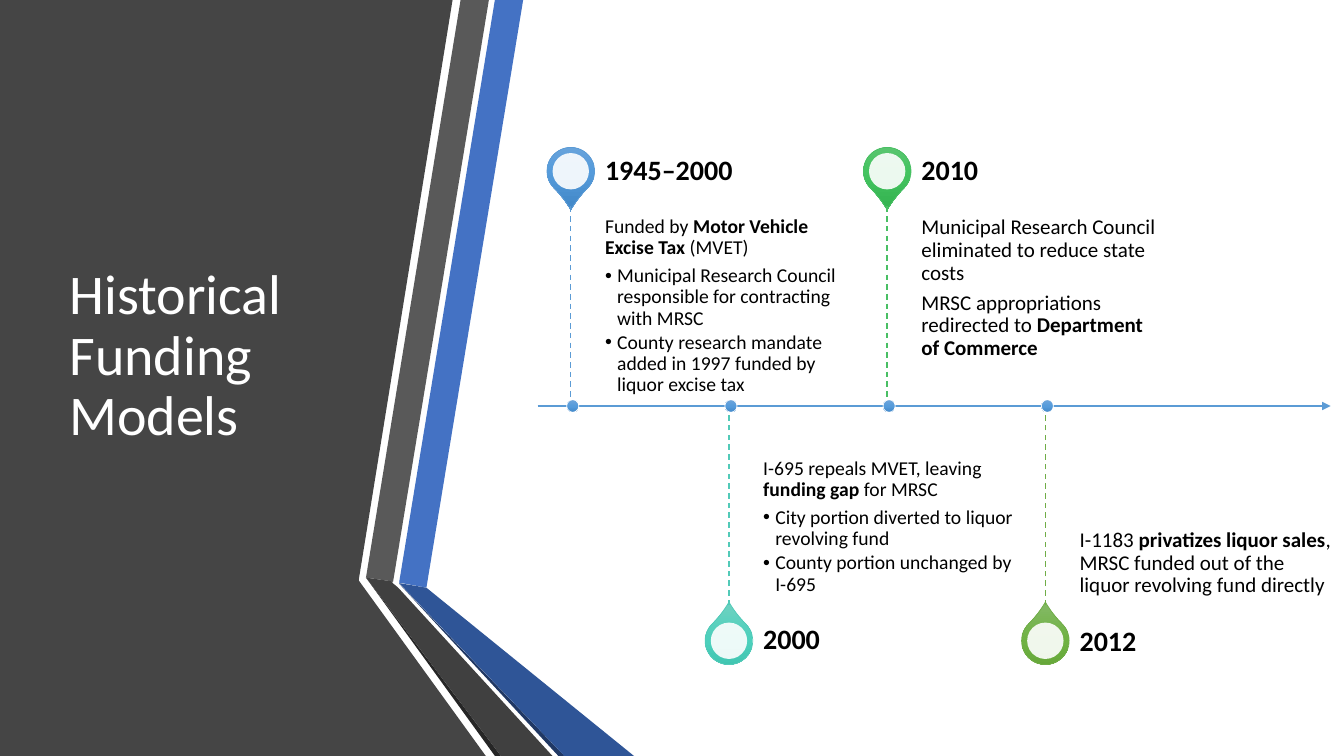
from lxml import etree
from pptx import Presentation
from pptx.dml.color import RGBColor
from pptx.enum.dml import MSO_LINE
from pptx.enum.shapes import MSO_CONNECTOR as Link, MSO_SHAPE as Preset
from pptx.enum.text import MSO_ANCHOR as Anchor
from pptx.oxml.ns import qn
from pptx.util import Pt

AXIS_COLOUR = "5B9BD5"
AXIS_GRADIENT = ("71A6DB", "559BDB", "448ACA")
BULLET = "• "

# Layered ribbon pieces, back to front: colour and outline
RIBBONS = [
    ("454545", [(0, 0), (323.3, 0), (256.3, 414), (256.3, 414.7), (347, 540), (0, 540)]),
    ("4472C4", [(285.1, 416.2), (304.6, 419.8), (373.7, 0), (353.5, 0)]),
    ("595959", [(349.2, 0), (329, 0), (261.4, 412.6), (280.8, 415.4)]),
    ("262626", [(261.4, 412.6), (353.5, 540), (357.8, 540)]),
    ("203864", [(285.1, 416.9), (398.9, 540), (403.2, 540)]),
    ("2F5597", [(285.1, 416.5), (403.2, 540), (452.9, 540), (304.6, 419.8)]),
    ("404040", [(394.6, 540), (284.4, 419.8), (280.1, 416.2), (280.8, 415.4),
                (261.4, 412.6), (357.8, 540)]),
]

# Double asterisks enclose bold words
EVENTS = [
    dict(year="1945–2000", colour=AXIS_COLOUR, gradient=AXIS_GRADIENT, size=14, nudge=0,
         story=["Funded by **Motor Vehicle Excise Tax** (MVET)",
                "• Municipal Research Council responsible for contracting with MRSC",
                "• County research mandate added in 1997 funded by liquor excise tax"]),
    dict(year="2000", colour="52CAB8", gradient=("6AD1C0", "4CD0BC", "3CC0AC"), size=14, nudge=0,
         story=["I-695 repeals MVET, leaving **funding gap **for MRSC",
                "• City portion diverted to liquor revolving fund",
                "• County portion unchanged by I-695"]),
    dict(year="2010", colour="49BF64", gradient=("64C677", "44C460", "36B552"), size=15, nudge=0,
         story=["Municipal Research Council eliminated to reduce state costs",
                "MRSC appropriations redirected to **Department of Commerce**"]),
    dict(year="2012", colour="70AD47", gradient=("81B861", "6FB242", "62A336"), size=15, nudge=1.4,
         story=["I-1183 **privatizes liquor sales**, MRSC funded out of the "
                "liquor revolving fund directly"]),
]


def rgb(colour):
    return RGBColor.from_string(colour)


def apply(target, values):
    for key, value in values.items():
        setattr(target, key, value)


def add_text(slide, box, paragraphs, size, colour, anchor, insets, bold=False):
    frame = slide.shapes.add_textbox(*map(Pt, box)).text_frame
    sides = ("margin_left", "margin_top", "margin_right", "margin_bottom")
    apply(frame, dict(zip(sides, map(Pt, insets)), word_wrap=True, vertical_anchor=anchor))
    for index, words in enumerate(paragraphs):
        paragraph = frame.paragraphs[0] if index == 0 else frame.add_paragraph()
        bulleted = words.startswith(BULLET)
        if bulleted:
            words = words.removeprefix(BULLET)
            props = paragraph._p.get_or_add_pPr()
            props.set("marL", str(Pt(8.64)))
            props.set("indent", str(-Pt(8.64)))
            etree.SubElement(props, qn("a:buFont")).set("typeface", "Arial")
            etree.SubElement(props, qn("a:buChar")).set("char", "•")
        apply(paragraph, dict(line_spacing=0.9,
                              space_after=Pt(size * (0.15 if bulleted else 0.35))))
        for part, piece in enumerate(words.split("**")):
            if piece:
                run = paragraph.add_run()
                run.text = piece
                apply(run.font, dict(name="Calibri", size=Pt(size), bold=bold or part % 2 == 1))
                run.font.color.rgb = rgb(colour)


def add_line(slide, start, end, colour, width):
    line = slide.shapes.add_connector(Link.STRAIGHT, *map(Pt, (*start, *end)))
    line.line.color.rgb = rgb(colour)
    line.line.width = Pt(width)
    etree.SubElement(line._element.spPr, qn("a:effectLst"))
    return line


def add_centred(slide, preset, x, y, width, height):
    shape = slide.shapes.add_shape(
        preset, Pt(x - width / 2), Pt(y - height / 2), Pt(width), Pt(height))
    shape.shadow.inherit = False
    return shape


def shade(shape, gradient, outline):
    shape.line.color.rgb = rgb(outline)
    shape.line.width = Pt(0.5)
    shape.fill.gradient()
    fill = shape._element.spPr.find(qn("a:gradFill"))
    fill.set("rotWithShape", "0")
    stops = fill.find(qn("a:gsLst"))
    for stop in list(stops):
        stops.remove(stop)
    for position, colour in zip((0, 50000, 100000), gradient):
        stop = etree.SubElement(stops, qn("a:gs"), pos=str(position))
        etree.SubElement(stop, qn("a:srgbClr"), val=colour)
    direction = fill.find(qn("a:lin"))
    direction.set("ang", "5400000")
    direction.set("scaled", "0")


def add_title_panel(slide, box):
    left, top, width, height = box
    for colour, outline in RIBBONS:
        points = [(Pt(left + x), Pt(top + y)) for x, y in outline]
        builder = slide.shapes.build_freeform(*points[0])
        builder.add_line_segments(points[1:], close=True)
        ribbon = builder.convert_to_shape()
        ribbon.shadow.inherit = False
        ribbon.fill.solid()
        ribbon.fill.fore_color.rgb = rgb(colour)
        ribbon.line.fill.background()
    add_text(slide, (left + 42.5, top + 54, 219, 402), ["Historical Funding Models"],
             40, "FFFFFF", Anchor.MIDDLE, (7.2, 3.6, 7.2, 3.6))


def add_event(slide, event, x, axis_y, above):
    reach, label_height = 142.5, 50.4
    side = -1 if above else 1
    tip_y = axis_y + side * reach
    pin_y = tip_y + side * label_height / 2
    text_left = x + 24.5

    # Pin with its pale centre
    pin = add_centred(slide, Preset.TEAR, x, pin_y, 34, 34)
    pin.adjustments[0] = 1.15
    pin.rotation = 135 if above else 315
    shade(pin, event["gradient"], event["colour"])
    centre = add_centred(slide, Preset.OVAL, x, pin_y, 26, 26)
    centre.fill.solid()
    centre.fill.fore_color.rgb = rgb("FFFFFF")
    centre.line.fill.background()
    tint = centre._element.spPr.find(qn("a:solidFill"))[0]
    etree.SubElement(tint, qn("a:alpha"), val="90000")

    # Story and year
    insets = (0, 7.2, 7.2, 11) if above else (0, 11, 0, 7.2)
    story_top = min(axis_y, tip_y) + event["nudge"]
    add_text(slide, (text_left, story_top, 180, reach), event["story"], event["size"],
             "000000", Anchor.TOP if above else Anchor.BOTTOM, insets)
    add_text(slide, (text_left, pin_y - label_height / 2 + event["nudge"], 180, label_height),
             [event["year"]], 20, "000000", Anchor.MIDDLE, (0, 0, 10, 0), bold=True)

    # Stem and its dot on the axis
    stem = add_line(slide, (x, tip_y), (x, axis_y), event["colour"], 1)
    stem.line.dash_style = MSO_LINE.DASH
    dot = add_centred(slide, Preset.OVAL, x + 1.4, axis_y, 8.7, 9)
    shade(dot, AXIS_GRADIENT, "FFFFFF")


def add_timeline(slide, box):
    left, top, width, height = box
    axis_y = top + height / 2
    axis = add_line(slide, (left, axis_y), (left + width, axis_y), AXIS_COLOUR, 1.5)
    etree.SubElement(axis.line._get_or_add_ln(), qn("a:tailEnd"), type="triangle")
    for index, event in enumerate(EVENTS):
        add_event(slide, event, left + 23.7 + 113 * index, axis_y, above=index % 2 == 0)


def main():
    deck = Presentation()
    apply(deck, dict(slide_width=Pt(960), slide_height=Pt(540)))
    slide = deck.slides.add_slide(deck.slide_layouts[6])
    add_title_panel(slide, (0, 0, 453, 540))
    add_timeline(slide, (384, 97, 566.4, 386))
    deck.save("out.pptx")


if __name__ == "__main__":
    main()
